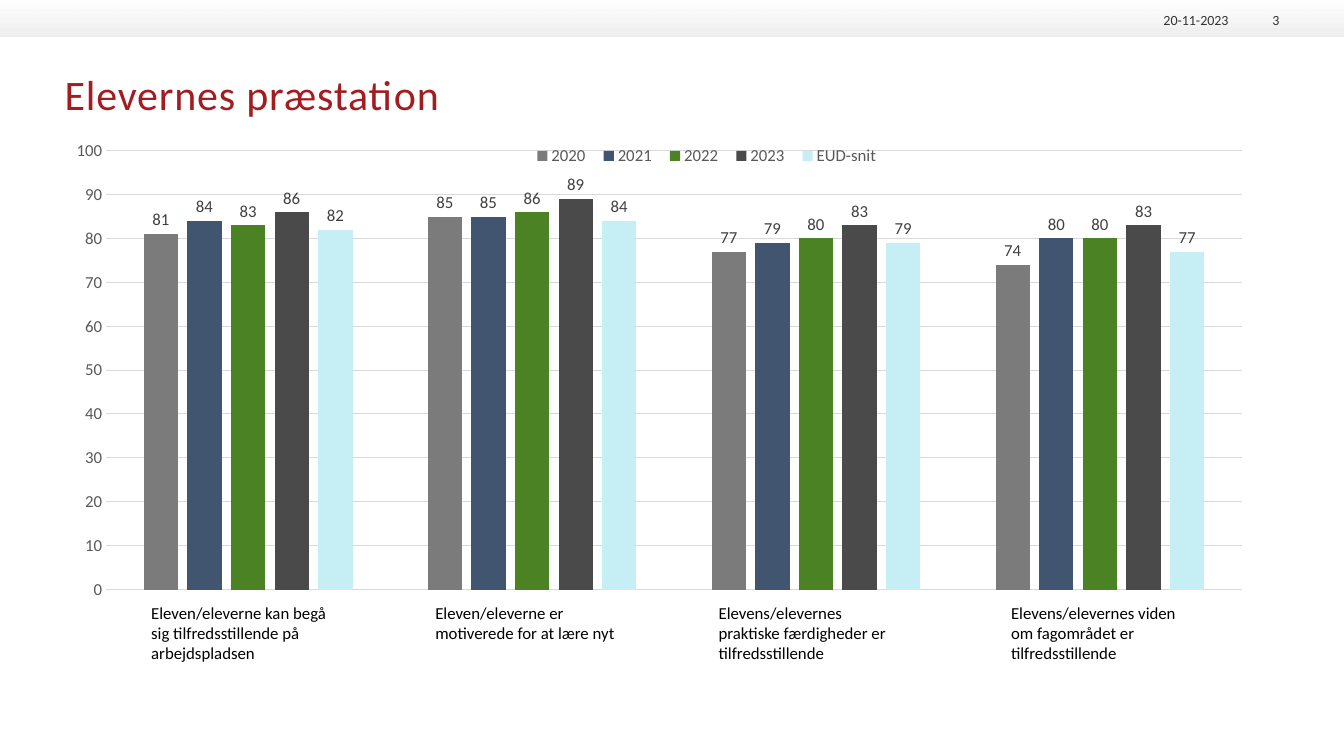
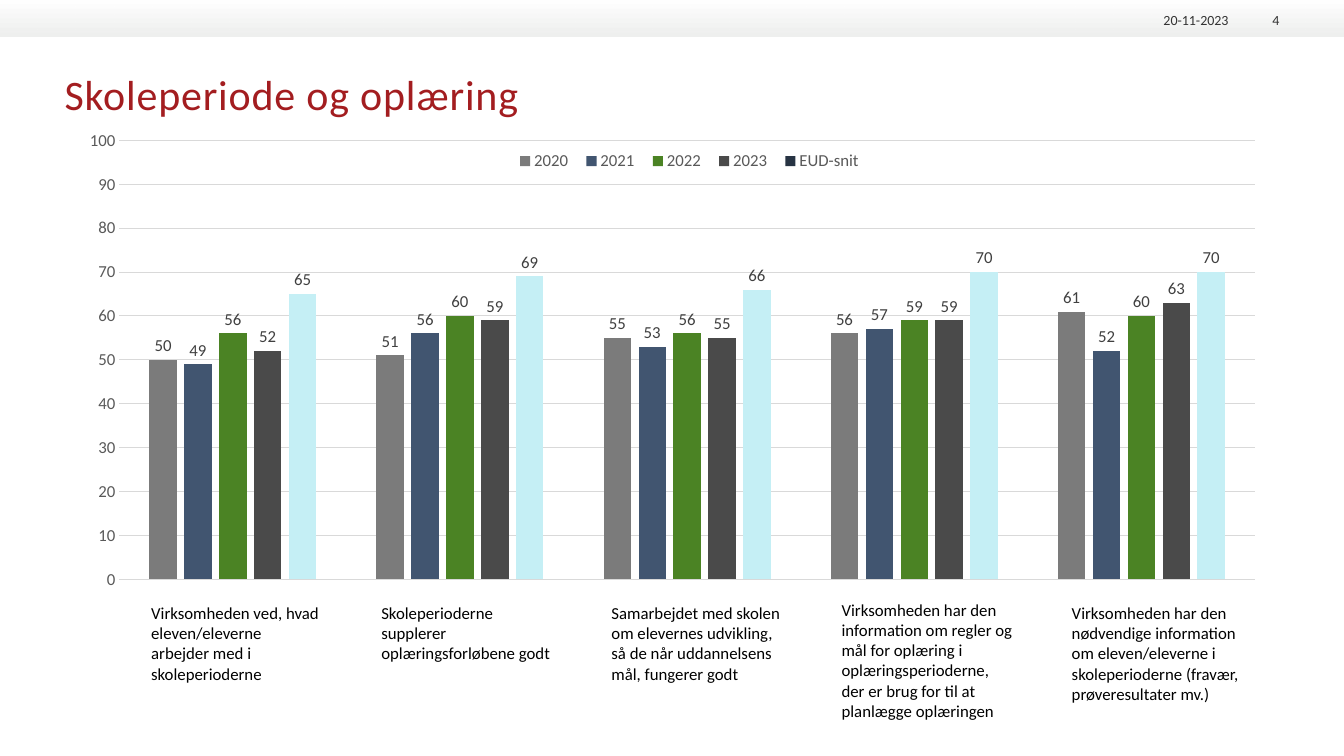
from dataclasses import dataclass

from lxml import etree
from pptx import Presentation
from pptx.chart import data as chart_data
from pptx.dml.color import RGBColor
from pptx.enum import chart as ce, shapes, text
from pptx.oxml import ns
from pptx.util import Cm, Pt


@dataclass(frozen=True)
class Theme:
    font: str = "Calibri"
    title: str = "A31D20"
    meta: str = "333333"
    body: str = "000000"
    axis: str = "595959"
    label: str = "404040"
    grid: str = "D9D9D9"
    band: tuple = ("FFFFFF", "EEEFEE")
    years: tuple = ("7B7B7B", "415570", "4B8324", "4A4A4A")
    average: str = "C5EFF5"
    average_key: str = "273343"
    title_size: int = 30
    body_size: int = 12
    meta_size: int = 10


@dataclass(frozen=True)
class Box:
    """A region in centimetres."""
    left: float
    top: float
    width: float
    height: float

    def inner(self, left, top, width, height):
        return Box(self.left + left, self.top + top, width, height)

    def emu(self):
        return Cm(self.left), Cm(self.top), Cm(self.width), Cm(self.height)


@dataclass(frozen=True)
class Caption:
    left: float
    wording: str
    lines: int
    width: float = 4.34
    rise: float = 0


THEME = Theme()
PAGE = Box(0, 0, 33.87, 19.05)
BAND = Box(0, 0, PAGE.width, 0.92)
TITLE = Box(1.63, 1.73, 30.58, 2.39)
CAPTION_TOP = 15.19
LINE_HEIGHT = 0.51
SERIES_NAMES = ("2020", "2021", "2022", "2023", "EUD-snit")


def style_font(font, size, color):
    font.name = THEME.font
    font.size = Pt(size)
    font.color.rgb = RGBColor.from_string(color)


def clear_margins(frame):
    frame.margin_left = frame.margin_top = frame.margin_right = frame.margin_bottom = 0


def add_run(paragraph, wording, size, color):
    run = paragraph.add_run()
    run.text = wording
    style_font(run.font, size, color)
    return run


def add_text(slide, box, wording, size, color):
    frame = slide.shapes.add_textbox(*box.emu()).text_frame
    frame.word_wrap = True
    clear_margins(frame)
    add_run(frame.paragraphs[0], wording, size, color)
    return frame


def move_band_to_layout(slide, layout):
    """Put the shaded top band behind everything on the shared layout."""
    band = slide.shapes.add_shape(shapes.MSO_SHAPE.RECTANGLE, *BAND.emu())
    band.shadow.inherit = False
    band.line.fill.background()
    band.fill.gradient()
    band.fill.gradient_angle = 270
    for stop, color in zip(band.fill.gradient_stops, THEME.band):
        stop.color.rgb = RGBColor.from_string(color)
    end_color = band._element.findall(".//" + ns.qn("a:srgbClr"))[-1]
    etree.SubElement(end_color, ns.qn("a:alpha")).set("val", "93000")
    layout.shapes._spTree.insert(2, band._element)


def add_header(slide, box, date, number):
    for wording, left, width in ((date, 28.7, 2.26), (number, 31.17, 1.07)):
        frame = add_text(slide, box.inner(left, 0.23, width, 0.48), wording,
                         THEME.meta_size, THEME.meta)
        frame.vertical_anchor = text.MSO_ANCHOR.BOTTOM
        frame.paragraphs[0].alignment = text.PP_ALIGN.RIGHT


def set_title(slide, box, wording):
    title = slide.shapes.title
    title.left, title.top, title.width, title.height = box.emu()
    frame = title.text_frame
    clear_margins(frame)
    frame.auto_size = text.MSO_AUTO_SIZE.NONE
    frame.vertical_anchor = text.MSO_ANCHOR.TOP
    paragraph = frame.paragraphs[0]
    paragraph.alignment = text.PP_ALIGN.LEFT
    run = add_run(paragraph, wording, THEME.title_size, THEME.title)
    run.font._element.set("spc", "60")


def set_layout(parent, position, x, y, w, h, inner=False):
    """Fix a chart part at fractions of the chart area."""
    for old in parent.findall(ns.qn("c:layout")):
        parent.remove(old)
    layout = etree.Element(ns.qn("c:layout"))
    manual = etree.SubElement(layout, ns.qn("c:manualLayout"))
    settings = [("layoutTarget", "inner")] if inner else []
    settings += [("xMode", "edge"), ("yMode", "edge"),
                 ("x", x), ("y", y), ("w", w), ("h", h)]
    for tag, value in settings:
        etree.SubElement(manual, ns.qn("c:" + tag)).set("val", str(value))
    parent.insert(position, layout)


def style_axes(chart):
    chart.category_axis.visible = False
    axis = chart.value_axis
    axis.minimum_scale, axis.maximum_scale, axis.major_unit = 0, 100, 10
    axis.major_tick_mark = axis.minor_tick_mark = ce.XL_TICK_MARK.NONE
    axis.format.line.fill.background()
    style_font(axis.tick_labels.font, THEME.body_size, THEME.axis)
    grid = axis.major_gridlines.format.line
    grid.width = Pt(0.75)
    grid.color.rgb = RGBColor.from_string(THEME.grid)


def style_series(plot, average_key):
    plot.gap_width, plot.overlap, plot.vary_by_categories = 219, -27, False
    for series, color in zip(plot.series, THEME.years + (average_key,)):
        series.format.fill.solid()
        series.format.fill.fore_color.rgb = RGBColor.from_string(color)
        labels = series.data_labels
        labels.show_value = True
        labels.position = ce.XL_LABEL_POSITION.OUTSIDE_END
        style_font(labels.font, THEME.body_size, THEME.label)
    if average_key != THEME.average:
        average = plot.series[len(THEME.years)]
        for index in range(len(average.values)):
            fill = average.points[index].format.fill
            fill.solid()
            fill.fore_color.rgb = RGBColor.from_string(THEME.average)


def add_score_chart(slide, box, scores, average_key, legend_at):
    """Columns per question; scores holds one row per series."""
    figures = chart_data.CategoryChartData(number_format="General")
    figures.categories = [str(n + 1) for n in range(len(scores[0]))]
    for name, row in zip(SERIES_NAMES, scores):
        figures.add_series(name, row)
    chart = slide.shapes.add_chart(ce.XL_CHART_TYPE.COLUMN_CLUSTERED,
                                   *box.emu(), figures).chart
    chart.has_title = False
    style_font(chart.font, THEME.meta_size, THEME.body)
    style_axes(chart)
    style_series(chart.plots[0], average_key)
    chart.has_legend = True
    legend = chart.legend
    legend.position = ce.XL_LEGEND_POSITION.BOTTOM
    legend.include_in_layout = False
    style_font(legend.font, THEME.body_size, THEME.axis)
    set_layout(legend._element, 1, *legend_at, 0.3, 0.06)
    plot_area = chart._chartSpace.find(".//" + ns.qn("c:plotArea"))
    set_layout(plot_area, 0, 0.045, 0.04, 0.936, 0.852, inner=True)


def add_captions(slide, box, captions):
    for caption in captions:
        place = box.inner(caption.left, CAPTION_TOP - caption.rise,
                          caption.width, caption.lines * LINE_HEIGHT)
        frame = add_text(slide, place, caption.wording, THEME.body_size, THEME.body)
        frame.auto_size = text.MSO_AUTO_SIZE.SHAPE_TO_FIT_TEXT


def build_score_slide(slide, number, title, chart_box, scores, average_key,
                      legend_at, captions):
    set_title(slide, TITLE, title)
    add_header(slide, BAND, "20-11-2023", number)
    add_score_chart(slide, chart_box, scores, average_key, legend_at)
    add_captions(slide, PAGE, captions)


PERFORMANCE = dict(
    number="3",
    title="Elevernes præstation",
    chart_box=Box(1.3, 3.28, 30.58, 12.98),
    scores=((81, 85, 77, 74), (84, 85, 79, 80), (83, 86, 80, 80),
            (86, 89, 83, 83), (82, 84, 79, 77)),
    average_key=THEME.average,
    legend_at=(0.39, 0.02),
    captions=(
        Caption(3.81, "Eleven/eleverne kan begå sig tilfredsstillende på "
                "arbejdspladsen", 3, width=4.72),
        Caption(10.97, "Eleven/eleverne er motiverede for at lære nyt", 2, width=5.08),
        Caption(18.11, "Elevens/elevernes praktiske færdigheder er "
                "tilfredsstillende", 3),
        Caption(25.48, "Elevens/elevernes viden om fagområdet er "
                "tilfredsstillende", 3),
    ),
)

TRAINING = dict(
    number="4",
    title="Skoleperiode og oplæring",
    chart_box=Box(1.63, 3.02, 30.58, 12.98),
    scores=((50, 51, 55, 56, 61), (49, 56, 53, 57, 52), (56, 60, 56, 59, 60),
            (52, 59, 55, 59, 63), (65, 69, 66, 70, 70)),
    average_key=THEME.average_key,
    legend_at=(0.365, 0.05),
    captions=(
        Caption(3.81, "Virksomheden ved, hvad eleven/eleverne arbejder med i "
                "skoleperioderne", 4),
        Caption(9.61, "Skoleperioderne supplerer oplæringsforløbene godt", 4),
        Caption(15.41, "Samarbejdet med skolen om elevernes udvikling, så de når "
                "uddannelsens mål, fungerer godt", 5),
        Caption(21.21, "Virksomheden har den information om regler og mål for "
                "oplæring i oplæringsperioderne, der er brug for til at "
                "planlægge oplæringen", 6, rise=0.08),
        Caption(27.01, "Virksomheden har den nødvendige information om "
                "eleven/eleverne i skoleperioderne (fravær, prøveresultater mv.)",
                5, width=4.78),
    ),
)


def main():
    deck = Presentation()
    deck.slide_width, deck.slide_height = Cm(PAGE.width), Cm(PAGE.height)
    layout = deck.slide_layouts.get_by_name("Title Only")
    slides = [deck.slides.add_slide(layout) for _ in range(2)]
    move_band_to_layout(slides[0], layout)
    for slide, content in zip(slides, (PERFORMANCE, TRAINING)):
        build_score_slide(slide, **content)
    deck.save("out.pptx")


if __name__ == "__main__":
    main()
